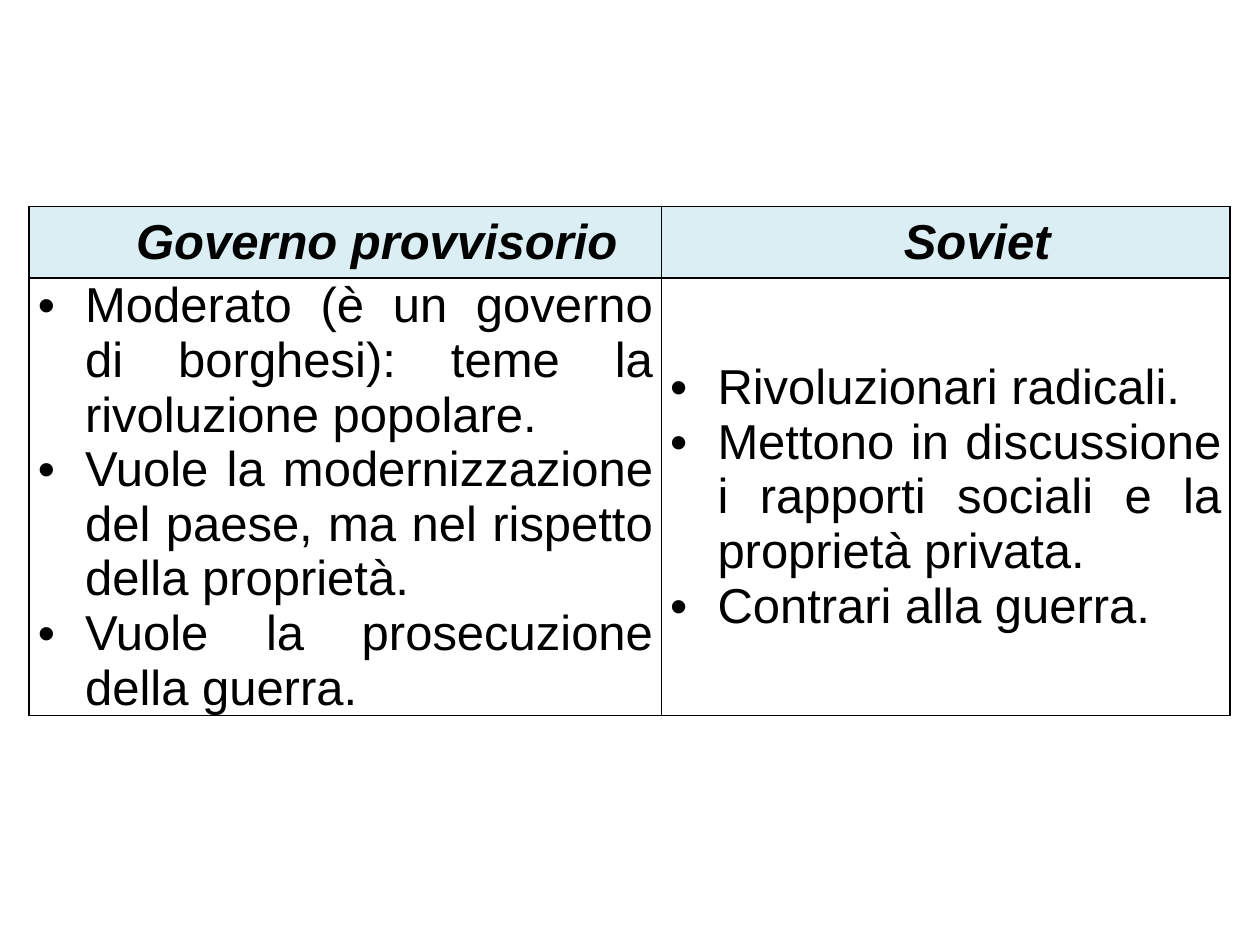
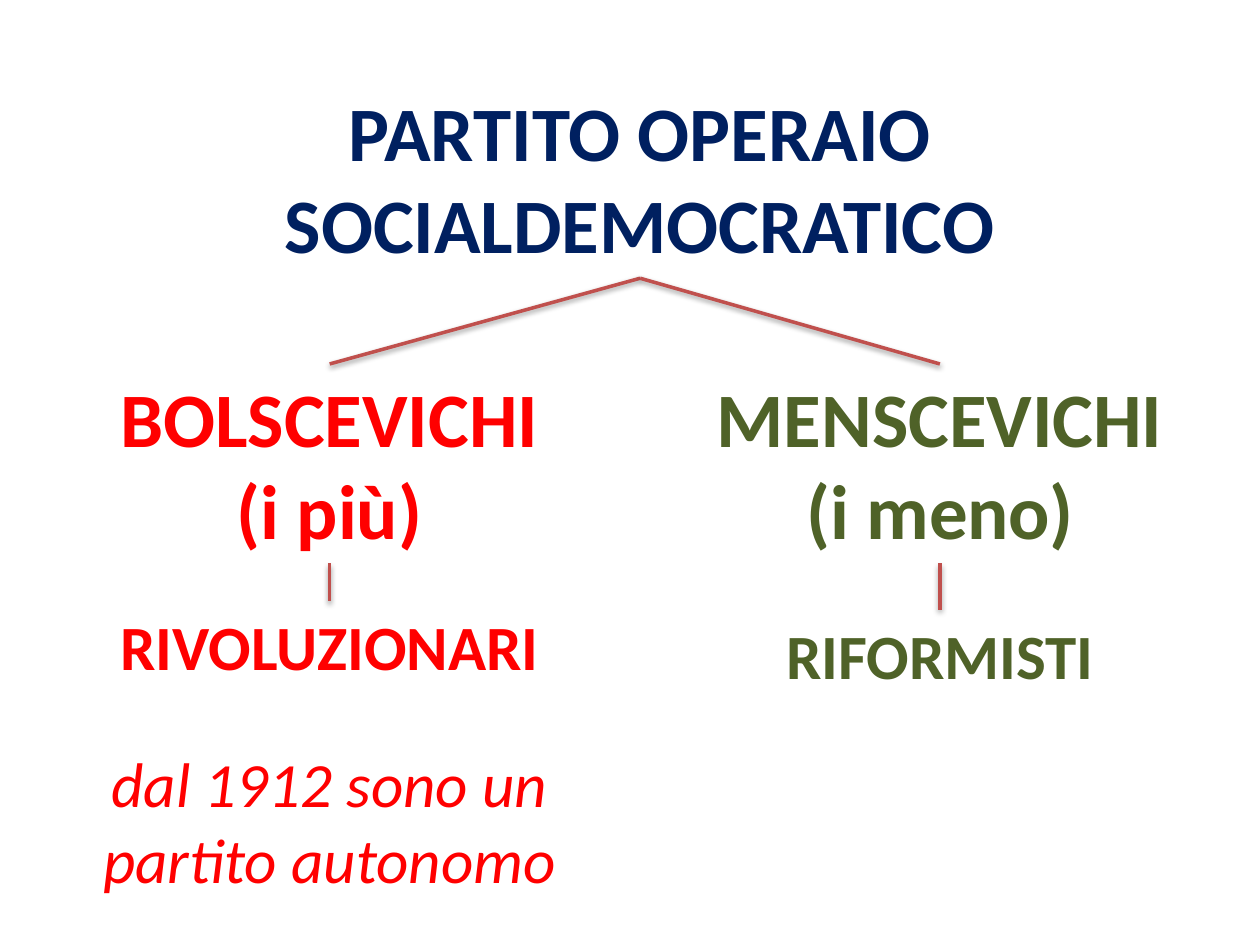
from lxml import etree
from pptx import Presentation
from pptx.dml.color import RGBColor
from pptx.enum.shapes import MSO_CONNECTOR
from pptx.enum.text import MSO_ANCHOR, MSO_AUTO_SIZE, PP_ALIGN
from pptx.oxml.ns import qn
from pptx.util import Pt

CENTER, JUSTIFY = PP_ALIGN.CENTER, PP_ALIGN.JUSTIFY
TOP, MIDDLE = MSO_ANCHOR.TOP, MSO_ANCHOR.MIDDLE
NO_AUTOFIT = MSO_AUTO_SIZE.NONE
STRAIGHT = MSO_CONNECTOR.STRAIGHT
TITLE_ONLY, BLANK = 5, 6

COLORS = {
    "black": "000000",
    "header": "DAEEF3",
    "party": "002060",
    "bolsheviks": "FF0000",
    "mensheviks": "4F6228",
    "branch": "C0504D",
}
TABLE_FONT, DIAGRAM_FONT = "Arial", "Calibri"
BULLET_INDENT = 27

COMPARISON = {
    "Governo provvisorio": [
        "Moderato (è un governo di borghesi): teme la rivoluzione popolare.",
        "Vuole la modernizzazione del paese, ma nel rispetto della proprietà.",
        "Vuole la prosecuzione della guerra.",
    ],
    "Soviet": [
        "Rivoluzionari radicali.",
        "Mettono in discussione i rapporti sociali e la proprietà privata.",
        "Contrari alla guerra.",
    ],
}


def rgb(name):
    return RGBColor.from_string(COLORS[name])


def add_element(parent, tag, **attributes):
    element = etree.SubElement(parent, qn(tag))
    for name, value in attributes.items():
        element.set(name, str(value))
    return element


def write(text_frame, lines, font, size, color, bold=False, italic=False, align=CENTER):
    """Fill a text frame, one paragraph for each line, in one style."""
    text_frame.text = "\n".join(lines)
    for paragraph in text_frame.paragraphs:
        paragraph.alignment = align
        for run in paragraph.runs:
            run.font.name = font
            run.font.size = Pt(size)
            run.font.bold = bold
            run.font.italic = italic
            run.font.color.rgb = rgb(color)


# Comparison table

def border_cell(cell):
    properties = cell._tc.get_or_add_tcPr()
    for position, side in enumerate(("a:lnL", "a:lnR", "a:lnT", "a:lnB")):
        line = add_element(properties, side, w=Pt(1))
        fill = add_element(line, "a:solidFill")
        add_element(fill, "a:srgbClr", val=COLORS["black"])
        properties.insert(position, line)


def format_cell(cell, lines, header):
    cell.margin_left = cell.margin_right = Pt(5)
    cell.margin_top = cell.margin_bottom = 0
    cell.vertical_anchor = MIDDLE
    write(cell.text_frame, lines, TABLE_FONT, 28, "black", bold=header,
          italic=header, align=CENTER if header else JUSTIFY)
    for paragraph in cell.text_frame.paragraphs:
        properties = paragraph._p.get_or_add_pPr()
        if header:
            properties.set("marL", str(Pt(36)))
        else:
            properties.set("marL", str(Pt(BULLET_INDENT)))
            properties.set("indent", str(-Pt(BULLET_INDENT)))
            add_element(properties, "a:buFont", typeface=TABLE_FONT)
            add_element(properties, "a:buChar", char="•")
    if header:
        cell.fill.solid()
        cell.fill.fore_color.rgb = rgb("header")
    else:
        cell.fill.background()
    border_cell(cell)


def add_comparison(slide, left, top, column_widths, row_heights):
    table = slide.shapes.add_table(
        len(row_heights), len(column_widths), Pt(left), Pt(top),
        Pt(sum(column_widths)), Pt(sum(row_heights))).table
    table.first_row = table.horz_banding = False
    for row, height in zip(table.rows, row_heights):
        row.height = Pt(height)
    for index, (heading, points) in enumerate(COMPARISON.items()):
        table.columns[index].width = Pt(column_widths[index])
        format_cell(table.cell(0, index), [heading], header=True)
        format_cell(table.cell(1, index), points, header=False)


# Party diagram

def add_party_title(slide, left, top, width, height):
    title = slide.shapes.title
    title.left, title.top, title.width, title.height = map(Pt, (left, top, width, height))
    text_frame = title.text_frame
    text_frame.word_wrap = True
    text_frame.auto_size = NO_AUTOFIT
    text_frame.vertical_anchor = TOP
    write(text_frame, ["PARTITO OPERAIO SOCIALDEMOCRATICO"],
          DIAGRAM_FONT, 44, "party", bold=True)


def add_label(slide, center, top, width, height, lines, size, color, **style):
    box = slide.shapes.add_textbox(Pt(center - width / 2), Pt(top), Pt(width), Pt(height))
    box.text_frame.word_wrap = True
    write(box.text_frame, lines, DIAGRAM_FONT, size, color, **style)


def add_branch_line(slide, start, end):
    line = slide.shapes.add_connector(STRAIGHT, *map(Pt, start + end))
    line.line.color.rgb = rgb("branch")
    line.line.width = Pt(2)
    effects = add_element(line._element.spPr, "a:effectLst")
    shadow = add_element(effects, "a:outerShdw", blurRad=Pt(3.1), dist=Pt(1.6),
                         dir=90 * 60000, rotWithShape=0)
    shade = add_element(shadow, "a:srgbClr", val=COLORS["black"])
    add_element(shade, "a:alpha", val=38000)


def add_faction(slide, apex, center, top, width, color, names, stance, stance_gap):
    """Hang a faction and its stance below the apex of the fork."""
    name_bottom = top + 114
    stance_top = name_bottom + stance_gap
    add_label(slide, center, top, width, 114, names, 44, color, bold=True)
    add_label(slide, center, stance_top, width, 51, [stance], 36, color, bold=True)
    add_branch_line(slide, apex, (center, top))
    add_branch_line(slide, (center, name_bottom), (center, stance_top))


def build_comparison_slide(presentation):
    slide = presentation.slides.add_slide(presentation.slide_layouts[BLANK])
    add_comparison(slide, 16.6, 118, column_widths=(361.4, 324.8), row_heights=(41, 250))


def build_party_slide(presentation):
    slide = presentation.slides.add_slide(presentation.slide_layouts[TITLE_ONLY])
    add_party_title(slide, 39.6, 44.6, 652.4, 114)
    apex, left_center, right_center = (365.8, 159), 188.4, 537.1
    add_faction(slide, apex, left_center, 208, 343.4, "bolsheviks",
                ["BOLSCEVICHI", "(i più)"], "RIVOLUZIONARI", 21.5)
    add_faction(slide, apex, right_center, 208, 365.8, "mensheviks",
                ["MENSCEVICHI", "(i meno)"], "RIFORMISTI", 26.5)
    add_label(slide, left_center, 422, 343.4, 94.5,
              ["dal 1912 sono un partito autonomo"], 36, "bolsheviks", italic=True)


def main():
    presentation = Presentation()
    presentation.slide_width, presentation.slide_height = Pt(720), Pt(540)
    build_comparison_slide(presentation)
    build_party_slide(presentation)
    presentation.save("out.pptx")


if __name__ == "__main__":
    main()
